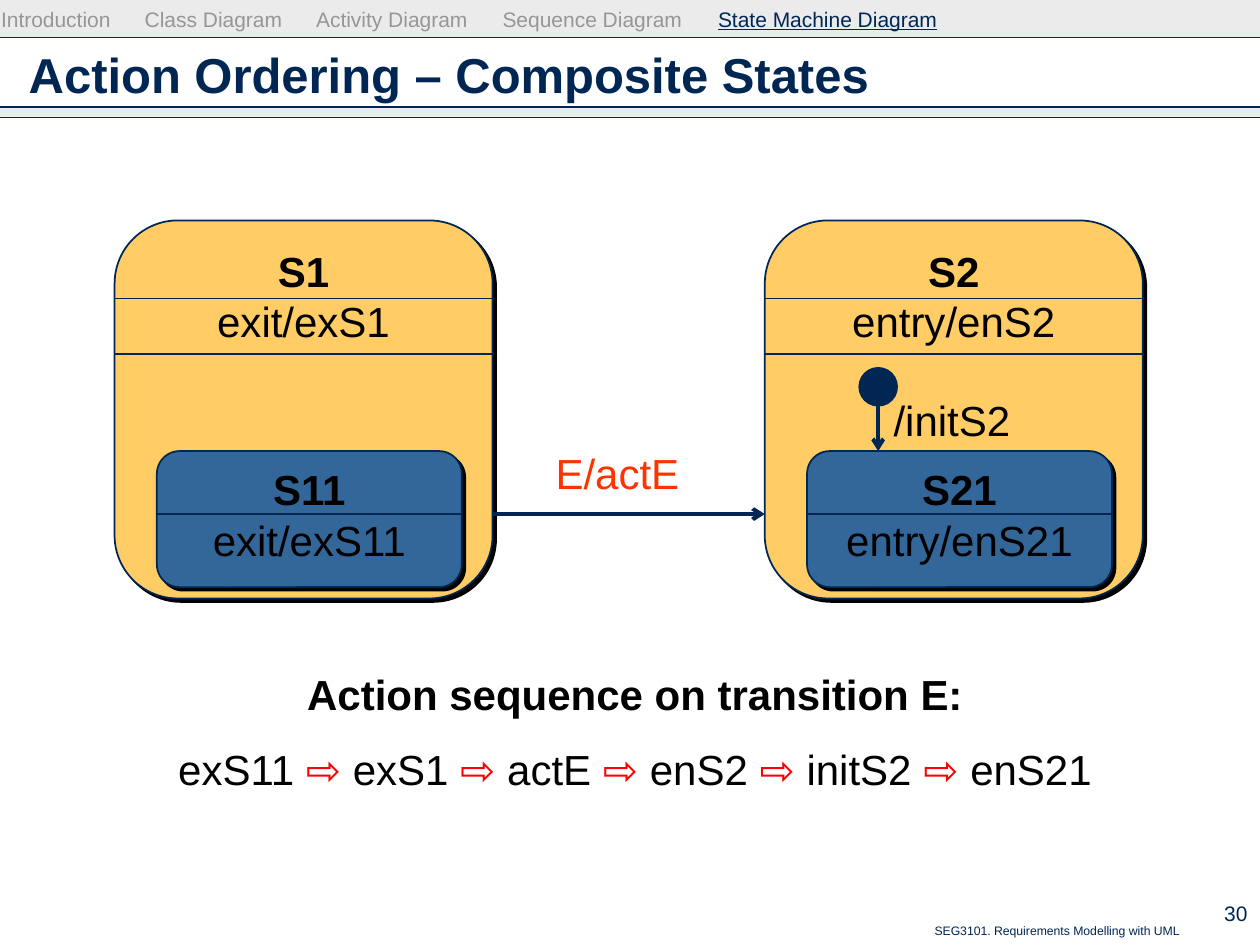
from lxml import etree
from pptx import Presentation
from pptx import util as u
from pptx.dml.color import RGBColor
from pptx.enum import shapes, text
from pptx.oxml import parse_xml
from pptx.oxml.ns import nsdecls, qn

COLS, ROWS = 100, 75
COLORS = {
    "navy": "002654", "grey": "CDCDCD", "muted": "969696", "black": "000000",
    "amber": "FFCC66", "blue": "336699", "orange": "FF3300", "red": "FF0000",
}
LEFT, CENTER, RIGHT = text.PP_ALIGN.LEFT, text.PP_ALIGN.CENTER, text.PP_ALIGN.RIGHT
TOP, MIDDLE = text.MSO_ANCHOR.TOP, text.MSO_ANCHOR.MIDDLE


class Deck:
    font = "Arial"

    def __init__(self):
        self.prs = Presentation()
        self.prs.slide_width, self.prs.slide_height = u.Inches(10), u.Inches(7.5)
        self.s = self.prs.slides.add_slide(self.prs.slide_layouts[6])

    def grid(self, *values):
        steps = self.prs.slide_width / COLS, self.prs.slide_height / ROWS
        return [u.Emu(round(v * steps[i % 2])) for i, v in enumerate(values)]

    def color(self, name):
        return RGBColor.from_string(COLORS[name])

    def fill_text(self, sp, paragraphs, size=24, align=CENTER, anchor=MIDDLE,
                  wrap=False, gap=0, tabs=(), **frame):
        tf = sp.text_frame
        values = {"word_wrap": wrap, "vertical_anchor": anchor, **frame}
        for name, value in values.items():
            setattr(tf, name, value)
        for i, runs in enumerate(paragraphs):
            p = tf.add_paragraph() if i else tf.paragraphs[0]
            p.alignment = align
            if i and gap:
                p.space_before = u.Pt(gap)
            if tabs:
                tab_list = etree.SubElement(p._p.get_or_add_pPr(), qn("a:tabLst"))
                for stop in tabs:
                    etree.SubElement(tab_list, qn("a:tab"),
                                     pos=str(self.grid(stop)[0]), algn="l")
            for content, color, *style in runs:
                r = p.add_run()
                r.text = content
                values = {"name": self.font, "size": u.Pt(size), "bold": "bold" in style,
                          "underline": "underline" in style}
                for name, value in values.items():
                    setattr(r.font, name, value)
                r.font.color.rgb = self.color(color)

    def label(self, box, paragraphs, **style):
        self.fill_text(self.s.shapes.add_textbox(*self.grid(*box)), paragraphs, **style)

    def shape(self, kind, box, fill, line=None):
        sp = self.s.shapes.add_shape(kind, *self.grid(*box))
        sp.shadow.inherit = False
        sp.fill.solid()
        sp.fill.fore_color.rgb = self.color(fill)
        if line:
            sp.line.color.rgb, sp.line.width = self.color(line), u.Pt(1)
        else:
            sp.line.fill.background()
        return sp

    def band(self, y, h):
        sp = self.shape(shapes.MSO_SHAPE.RECTANGLE, (0, y, COLS, h), "grey")
        fill = sp._element.spPr.find(qn("a:solidFill"))
        etree.SubElement(fill[0], qn("a:alpha"), val="40000")

    def line(self, x1, y1, x2, y2, width=1, arrow=False):
        c = self.s.shapes.add_connector(shapes.MSO_CONNECTOR.STRAIGHT,
                                        *self.grid(x1, y1, x2, y2))
        c.line.color.rgb, c.line.width = self.color("navy"), u.Pt(width)
        if arrow:
            etree.SubElement(c.line._get_or_add_ln(), qn("a:tailEnd"), type="arrow")
        etree.SubElement(c._element.spPr, qn("a:effectLst"))

    def state(self, box, fill, name, action, dividers):
        x, y, w, h = box
        sp = self.shape(shapes.MSO_SHAPE.ROUNDED_RECTANGLE, box, fill, "navy")
        sp.adjustments[0] = 0.167
        sp._element.spPr.find(qn("a:effectLst")).append(parse_xml(
            f'<a:outerShdw {nsdecls("a")} dist="{u.Pt(2.8)}" dir="2700000" algn="ctr" '
            f'rotWithShape="0"><a:srgbClr val="{COLORS["black"]}"/></a:outerShdw>'))
        self.fill_text(sp, [[(name, "black", "bold")], [(action, "black")]], anchor=TOP)
        for offset in dividers:
            self.line(x, y + offset, x + w, y + offset)


def main():
    d = Deck()

    d.band(0, 3)
    d.band(8.5, 0.75)
    for y in (3, 8.5, 9.3):
        d.line(0, y, COLS, y, 0.75)
    d.label((32.5, 72.8, 62.1, 2.2), [[("SEG3101. Requirements Modelling with UML", "navy")]],
            size=7, align=RIGHT, anchor=TOP, wrap=True)
    d.label((93, 70.8, 7, 3.4), [[("30", "navy")]], size=12, align=RIGHT, wrap=True)
    d.label((1.3, 2.6, 97.4, 6.6), [[("Action Ordering – Composite States", "navy", "bold")]],
            size=28, align=LEFT, wrap=True)
    topics = ("Introduction", "Class Diagram", "Activity Diagram", "Sequence Diagram")
    d.label((-0.9, 0.5, 79.9, 2.5),
            [[(f"{topic}\t", "muted") for topic in topics]
             + [("State Machine Diagram", "navy", "underline")]],
            size=12, align=LEFT, anchor=TOP, wrap=True, margin_top=0,
            tabs=(11.4, 25, 39.8, 56.9))

    for x, number, action in ((9.1, 1, "exit/ex"), (60.7, 2, "entry/en")):
        for box, fill, name, dividers in (
                ((x, 17.5, 30, 30), "amber", f"S{number}", (6.2, 10.6)),
                ((x + 3.35, 35.8, 24.2, 10.8), "blue", f"S{number}1", (5,))):
            d.state(box, fill, name, action + name, dividers)

    d.line(69.7, 30.6, 69.7, 35.8, 2.25, arrow=True)
    d.shape(shapes.MSO_SHAPE.OVAL, (68.2, 29.2, 3, 3), "navy", "navy")
    d.label((69.9, 30.8, 11.3, 5), [[("/initS2", "black")]])
    d.line(39.1, 40.8, 60.7, 40.8, 2.25, arrow=True)
    d.label((43.1, 35, 11.8, 5), [[("E/actE", "orange")]])

    sequence = [("exS11", "black")]
    for step in ("exS1", "actE", "enS2", "initS2", "enS21"):
        sequence += [(" ⇨ ", "red"), (step, "black")]
    d.label((12.6, 52.5, 75.6, 11),
            [[("Action sequence on transition E:", "black", "bold")], sequence], gap=14)

    d.prs.save("out.pptx")


if __name__ == "__main__":
    main()
